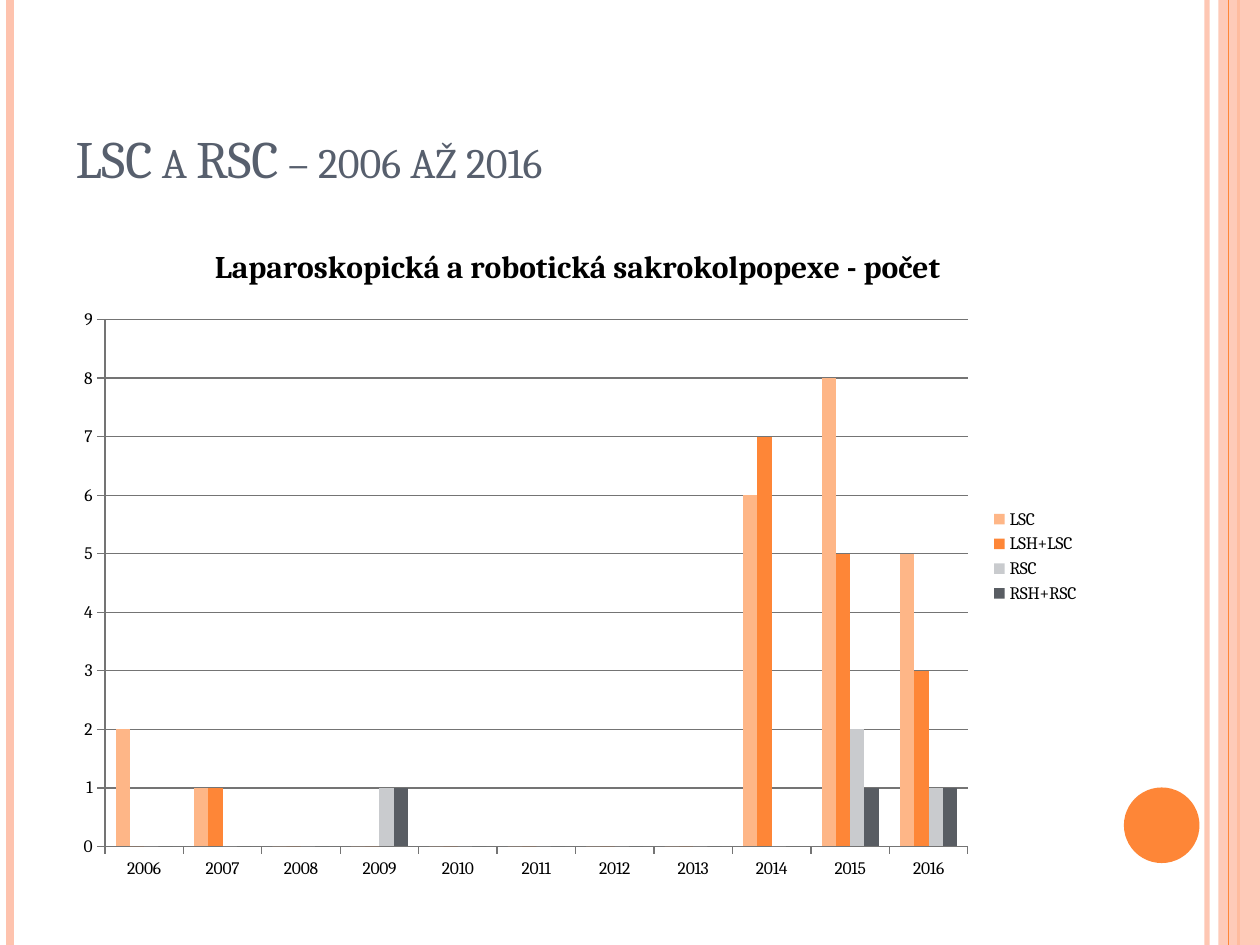
from dataclasses import dataclass
from typing import NamedTuple

from lxml.etree import SubElement
from pptx import Presentation
from pptx.chart.data import CategoryChartData
from pptx.dml.color import RGBColor
from pptx.enum.chart import XL_CHART_TYPE as ChartType
from pptx.enum.chart import XL_LEGEND_POSITION as LegendPosition
from pptx.enum.chart import XL_TICK_MARK as TickMark
from pptx.enum.shapes import MSO_CONNECTOR as Connector
from pptx.enum.shapes import MSO_SHAPE as ShapeKind
from pptx.enum.text import MSO_ANCHOR as Anchor
from pptx.enum.text import MSO_AUTO_SIZE as AutoSize
from pptx.enum.text import PP_ALIGN as Align
from pptx.oxml.ns import qn
from pptx.util import Inches, Pt


@dataclass(frozen=True)
class Theme:
    font: str = "Cambria"
    pale: str = "FEC3AE"
    accent: str = "FE8637"
    heading: str = "575F6D"
    ink: str = "000000"
    grid: str = "747474"
    heading_size: float = 30
    chart_title_size: float = 18
    chart_size: float = 10


class Box(NamedTuple):
    left: float
    top: float
    width: float
    height: float

    def emu(self) -> list:
        return [Inches(length) for length in self]


class Stripe(NamedTuple):
    x: float
    color: str
    weight: float
    opacity: int = 100


class Series(NamedTuple):
    name: str
    color: str
    counts: dict  # year -> operations, other years are zero


THEME = Theme()
WIDTH, HEIGHT = 10, 7.5
MARGIN, COLUMN = 0.5, 8.17
TITLE_BOX = Box(MARGIN, 0.3, COLUMN, 1.25)
CHART_BOX = Box(MARGIN, 1.75, COLUMN, 5.33)
BAND = Box(9.67, 0, 0.33, HEIGHT)
DISC = Box(8.92, 6.25, 0.6, 0.6)

STRIPES_BELOW = [
    Stripe(9.58, THEME.pale, 3, 93),
    Stripe(0.08, THEME.pale, 4.5),
    Stripe(9.83, THEME.accent, 1.5),
]
STRIPE_ABOVE = Stripe(9.75, THEME.accent, 0.75)

YEARS = range(2006, 2017)
SERIES = [
    Series("LSC", "FEB687", {2006: 2, 2007: 1, 2014: 6, 2015: 8, 2016: 5}),
    Series("LSH+LSC", "FE8637", {2007: 1, 2014: 7, 2015: 5, 2016: 3}),
    Series("RSC", "C9CBCE", {2009: 1, 2015: 2, 2016: 1}),
    Series("RSH+RSC", "595D63", {2009: 1, 2015: 1, 2016: 1}),
]


def rgb(color: str) -> RGBColor:
    return RGBColor.from_string(color)


def set_opacity(shape, percent: int) -> None:
    color = next(shape.element.spPr.iter(qn("a:srgbClr")))
    SubElement(color, qn("a:alpha"), val=str(percent * 1000))


def style_font(font, size: float, color: str, bold: bool = False) -> None:
    font.name, font.size, font.bold = THEME.font, Pt(size), bold
    font.color.rgb = rgb(color)


def add_stripe(page, stripe: Stripe) -> None:
    x = Inches(stripe.x)
    line = page.shapes.add_connector(Connector.STRAIGHT, x, 0, x, Inches(HEIGHT))
    line.line.color.rgb = rgb(stripe.color)
    line.line.width = Pt(stripe.weight)
    if stripe.opacity < 100:
        set_opacity(line, stripe.opacity)
    SubElement(line.element.spPr, qn("a:effectLst"))


def add_plain_shape(page, kind, box: Box, color: str, opacity: int = 100) -> None:
    shape = page.shapes.add_shape(kind, *box.emu())
    shape.shadow.inherit = False
    shape.fill.solid()
    shape.fill.fore_color.rgb = rgb(color)
    shape.line.fill.background()
    if opacity < 100:
        set_opacity(shape, opacity)


def fill_title(page, text: str) -> None:
    title = page.shapes.title
    title.left, title.top, title.width, title.height = TITLE_BOX.emu()
    frame = title.text_frame
    frame.word_wrap, frame.auto_size = True, AutoSize.NONE
    frame.vertical_anchor = Anchor.BOTTOM
    para = frame.paragraphs[0]
    para.alignment = Align.LEFT
    span = para.add_run()
    span.text = text
    style_font(span.font, THEME.heading_size, THEME.heading)
    span.font._element.set("cap", "small")


def style_axis(axis, gridlines: bool) -> None:
    axis.major_tick_mark, axis.minor_tick_mark = TickMark.OUTSIDE, TickMark.NONE
    axis.has_major_gridlines = gridlines
    lines = [axis.format.line]
    if gridlines:
        lines.append(axis.major_gridlines.format.line)
    for line in lines:
        line.color.rgb = rgb(THEME.grid)
        line.width = Pt(0.75)


def add_count_chart(page, heading: str) -> None:
    data = CategoryChartData()
    data.categories = [str(year) for year in YEARS]
    for series in SERIES:
        data.add_series(series.name, [series.counts.get(year, 0) for year in YEARS])
    chart = page.shapes.add_chart(
        ChartType.COLUMN_CLUSTERED, *CHART_BOX.emu(), data
    ).chart
    style_font(chart.font, THEME.chart_size, THEME.ink)

    # Chart title and legend
    chart.has_title = True
    span = chart.chart_title.text_frame.paragraphs[0].add_run()
    span.text = heading
    style_font(span.font, THEME.chart_title_size, THEME.ink, bold=True)
    chart.chart_title.include_in_layout = False
    chart.has_legend = True
    chart.legend.position = LegendPosition.RIGHT
    chart.legend.include_in_layout = False

    # Axes and columns
    style_axis(chart.category_axis, gridlines=False)
    style_axis(chart.value_axis, gridlines=True)
    plot = chart.plots[0]
    plot.gap_width, plot.overlap, plot.vary_by_categories = 150, 0, False
    for columns, series in zip(plot.series, SERIES):
        columns.format.fill.solid()
        columns.format.fill.fore_color.rgb = rgb(series.color)


def main() -> None:
    deck = Presentation()
    deck.slide_width, deck.slide_height = Inches(WIDTH), Inches(HEIGHT)
    page = deck.slides.add_slide(deck.slide_layouts.get_by_name("Title Only"))

    # Side decoration
    for stripe in STRIPES_BELOW:
        add_stripe(page, stripe)
    add_plain_shape(page, ShapeKind.RECTANGLE, BAND, THEME.pale, 87)
    add_stripe(page, STRIPE_ABOVE)
    add_plain_shape(page, ShapeKind.OVAL, DISC, THEME.accent)

    # Content
    fill_title(page, "LSC a RSC – 2006 až 2016")
    add_count_chart(page, "Laparoskopická a robotická sakrokolpopexe - počet")
    deck.save("out.pptx")


if __name__ == "__main__":
    main()
